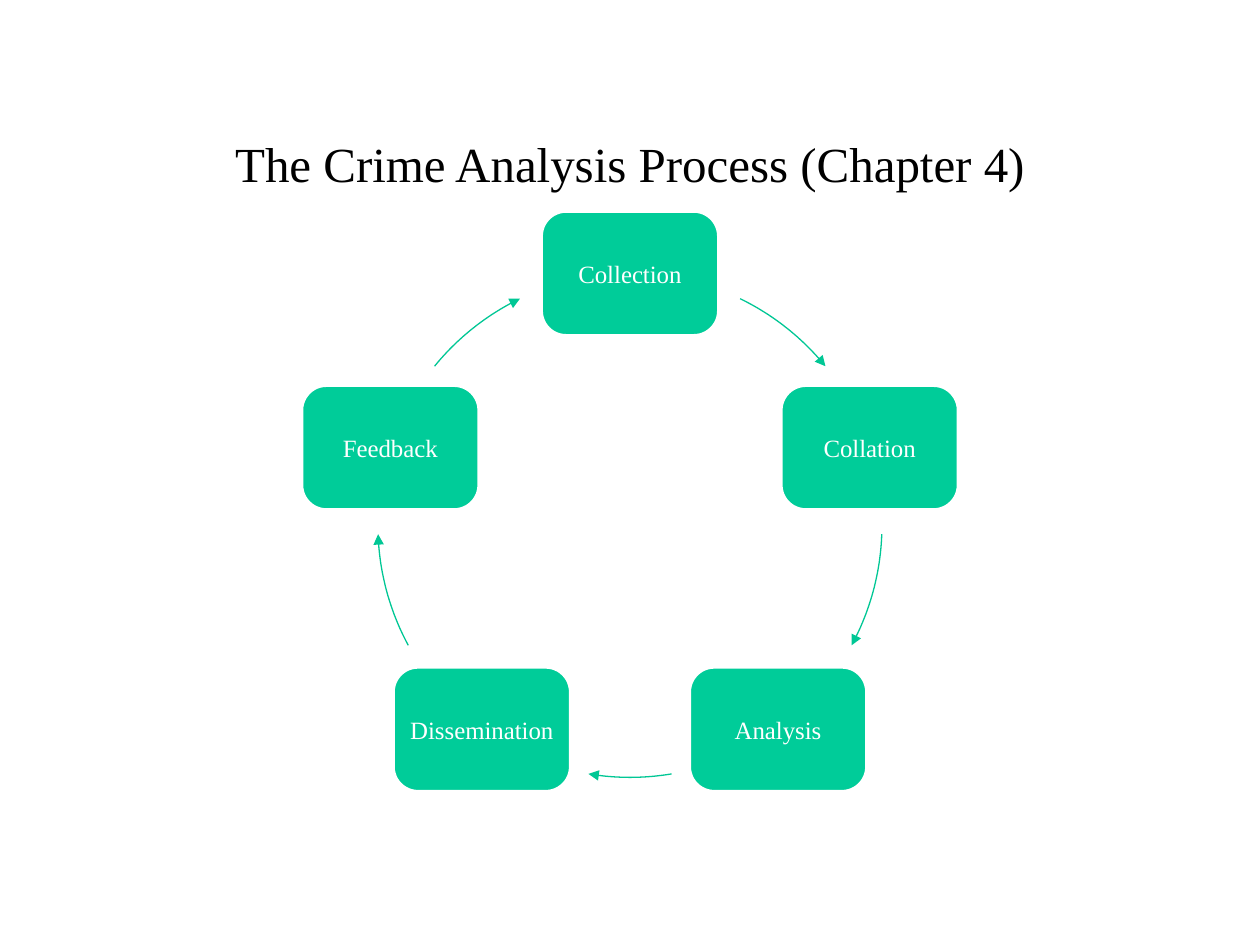
import math

from lxml import etree
from pptx import Presentation
from pptx import util as u
from pptx.dml.color import RGBColor
from pptx.enum import shapes, text
from pptx.oxml.ns import qn


def color(value):
    return RGBColor.from_string(value)


class CycleSlide:
    """Draws a titled cycle of steps on one slide."""

    font = "Times New Roman"
    ink, paper = "000000", "FFFFFF"
    step_fill, arrow_line = "00CC99", "00C795"
    center_x, center_y, radius = 5, 4.17, 2
    step_width, step_height = 1.41, 0.99

    def __init__(self, deck):
        self.slide = deck.slides.add_slide(deck.slide_layouts[6])

    def point(self, degrees):
        angle = math.radians(degrees)
        return (self.center_x + self.radius * math.sin(angle),
                self.center_y - self.radius * math.cos(angle))

    def label(self, box, words, size, ink):
        frame = box.text_frame
        frame.word_wrap = True
        frame.vertical_anchor = text.MSO_ANCHOR.MIDDLE
        frame.margin_left = frame.margin_right = u.Inches(0.05)
        frame.margin_top = frame.margin_bottom = u.Inches(0.05)
        para = frame.paragraphs[0]
        para.text = words
        para.alignment = text.PP_ALIGN.CENTER
        para.font.name = self.font
        para.font.size = u.Pt(size)
        para.font.color.rgb = color(ink)

    def title(self, words):
        box = self.slide.shapes.add_textbox(
            u.Inches(0.75), u.Inches(0.67), u.Inches(8.5), u.Inches(1.25))
        self.label(box, words, 28, self.ink)

    def step(self, words, degrees):
        x, y = self.point(degrees)
        box = self.slide.shapes.add_shape(
            shapes.MSO_SHAPE.ROUNDED_RECTANGLE,
            u.Inches(x - self.step_width / 2), u.Inches(y - self.step_height / 2),
            u.Inches(self.step_width), u.Inches(self.step_height))
        box.adjustments[0] = 0.2
        box.shadow.inherit = False
        box.fill.solid()
        box.fill.fore_color.rgb = color(self.step_fill)
        box.line.color.rgb = color(self.paper)
        box.line.width = u.Pt(2)
        self.label(box, words, 14.2, self.paper)

    def arrow(self, start, end, pieces=24):
        angles = [start + (end - start) * i / pieces for i in range(pieces + 1)]
        points = [tuple(u.Inches(v) for v in self.point(a)) for a in angles]
        builder = self.slide.shapes.build_freeform(*points[0])
        builder.add_line_segments(points[1:], close=False)
        arc = builder.convert_to_shape()
        arc.shadow.inherit = False
        arc.fill.background()
        arc.line.color.rgb = color(self.arrow_line)
        arc.line.width = u.Pt(0.75)
        outline = arc.element.spPr.find(qn("a:ln"))
        etree.SubElement(outline, qn("a:tailEnd"), type="triangle")


def main():
    deck = Presentation()
    deck.slide_width, deck.slide_height = u.Inches(10), u.Inches(7.5)
    page = CycleSlide(deck)
    page.title("The Crime Analysis Process (Chapter 4)")
    steps = ["Collection", "Collation", "Analysis", "Dissemination", "Feedback"]
    arcs = [(25.9, 50.85), (92, 118.4), (170.5, 189.5), (241.6, 268), (309.15, 334.1)]
    for index, (words, arc) in enumerate(zip(steps, arcs)):
        page.step(words, index * 360 / len(steps))
        page.arrow(*arc)
    deck.save("out.pptx")


if __name__ == "__main__":
    main()
